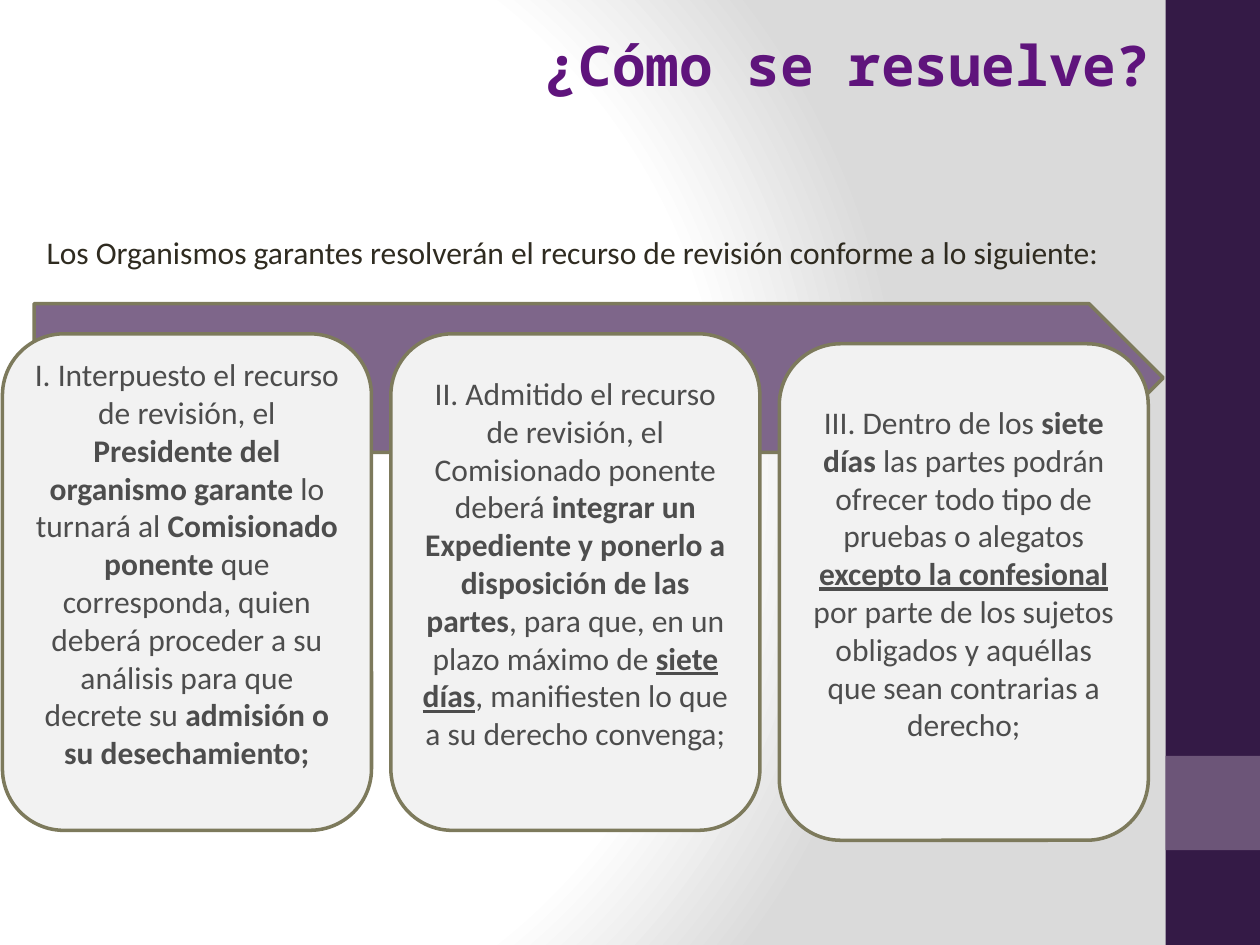
from dataclasses import dataclass

from lxml.etree import SubElement
from pptx import Presentation
from pptx.dml.color import RGBColor
from pptx.enum.shapes import MSO_SHAPE
from pptx.enum.text import MSO_ANCHOR, PP_ALIGN
from pptx.oxml.ns import qn
from pptx.util import Cm, Pt


@dataclass(frozen=True)
class Theme:
    band: str = "341A46"
    band_accent: str = "6C5578"
    title: str = "5F147C"
    intro: str = "2F2B20"
    arrow: str = "7E668A"
    outline: str = "7D7A5C"
    card: str = "F2F2F2"
    card_text: str = "4D4D4D"
    title_font: str = "Noto Sans Mono"
    body_font: str = "Calibri"
    title_size: int = 32
    body_size: int = 18
    line_width: int = 2
    backdrop: tuple = ((0, "FFFFFF"), (75, "FFFFFF"), (100, "DADADA"))


THEME = Theme()

# Each step is a list of (text, style); b is bold, u is underlined.
STEPS = [
    [
        ("I. Interpuesto el recurso de revisión, el ", ""),
        ("Presidente del organismo garante ", "b"),
        ("lo turnará al ", ""),
        ("Comisionado ponente ", "b"),
        ("que corresponda, quien deberá proceder a su análisis "
         "para que decrete su ", ""),
        ("admisión o su desechamiento;", "b"),
    ],
    [
        ("II. Admitido el recurso de revisión, el Comisionado ponente deberá ", ""),
        ("integrar un Expediente y ponerlo a disposición de las partes", "b"),
        (", para que, en un plazo máximo de ", ""),
        ("siete días", "bu"),
        (", manifiesten lo que a su derecho convenga;", ""),
    ],
    [
        ("III. Dentro de los ", ""),
        ("siete días", "b"),
        (" las partes podrán ofrecer todo tipo de pruebas o alegatos ", ""),
        ("excepto la confesional ", "bu"),
        ("por parte de los sujetos obligados y aquéllas que sean "
         "contrarias a derecho;", ""),
    ],
]
CARD_LEFT, CARD_PITCH = 0.05, 7.83
CARD_WIDTH, CARD_HEIGHT = 7.44, 10.01
CARD_TOPS = (6.73, 6.73, 6.93)


def set_radial_background(slide):
    """Spread the backdrop colours in circles from a point left of centre."""
    fill = slide.background.fill
    fill.gradient()
    grad = slide.background._cSld.find(".//" + qn("a:gradFill"))
    for child in list(grad):
        grad.remove(child)
    stops = SubElement(grad, qn("a:gsLst"))
    for pos, color in THEME.backdrop:
        stop = SubElement(stops, qn("a:gs"), pos=str(pos * 1000))
        SubElement(stop, qn("a:srgbClr"), val=color)
    circle = SubElement(grad, qn("a:path"), {"path": "circle"})
    SubElement(circle, qn("a:fillToRect"),
               l="20000", t="50000", r="100000", b="50000")


def format_run(r, font, size, color, style=""):
    r.font.name = font
    r.font.size = Pt(size)
    r.font.color.rgb = RGBColor.from_string(color)
    r.font.bold = "b" in style
    r.font.underline = "u" in style


def add_block(slide, kind, left, top, width, height, fill, outlined=False):
    sp = slide.shapes.add_shape(kind, Cm(left), Cm(top), Cm(width), Cm(height))
    sp.shadow.inherit = False
    sp.fill.solid()
    sp.fill.fore_color.rgb = RGBColor.from_string(fill)
    if outlined:
        sp.line.color.rgb = RGBColor.from_string(THEME.outline)
        sp.line.width = Pt(THEME.line_width)
    else:
        sp.line.fill.background()
    return sp


def set_title(slide, text):
    sp = slide.shapes.title
    sp.left, sp.top, sp.width, sp.height = Cm(4.7), Cm(0.48), Cm(18.75), Cm(1.63)
    tf = sp.text_frame
    tf.text = text
    tf.vertical_anchor = MSO_ANCHOR.TOP
    p = tf.paragraphs[0]
    p.alignment = PP_ALIGN.RIGHT
    format_run(p.runs[0], THEME.title_font, THEME.title_size, THEME.title, "b")


def add_intro(slide, text):
    tf = slide.shapes.add_textbox(Cm(0.69), Cm(4.57), Cm(22.4), Cm(1.02)).text_frame
    tf.word_wrap = True
    tf.text = text
    format_run(tf.paragraphs[0].runs[0],
               THEME.body_font, THEME.body_size, THEME.intro)


def add_card(slide, left, top, parts):
    sp = add_block(slide, MSO_SHAPE.ROUNDED_RECTANGLE, left, top,
                   CARD_WIDTH, CARD_HEIGHT, THEME.card, outlined=True)
    tf = sp.text_frame
    tf.word_wrap = True
    tf.vertical_anchor = MSO_ANCHOR.MIDDLE
    tf.margin_bottom = Cm(0.89)
    p = tf.paragraphs[0]
    p.alignment = PP_ALIGN.CENTER
    for text, style in parts:
        r = p.add_run()
        r.text = text
        format_run(r, THEME.body_font, THEME.body_size, THEME.card_text, style)


def main():
    prs = Presentation()
    prs.slide_width, prs.slide_height = Cm(25.4), Cm(19.05)
    slide = prs.slides.add_slide(prs.slide_layouts[5])
    set_radial_background(slide)

    add_block(slide, MSO_SHAPE.RECTANGLE, 23.5, 0, 1.9, 19.05, THEME.band)
    add_block(slide, MSO_SHAPE.RECTANGLE, 23.5, 15.24, 1.9, 1.9, THEME.band_accent)
    set_title(slide, "¿Cómo se resuelve?")
    add_intro(slide, "Los Organismos garantes resolverán el recurso de revisión "
                     "conforme a lo siguiente:")
    add_block(slide, MSO_SHAPE.PENTAGON, 0.69, 6.12, 22.76, 3, THEME.arrow,
              outlined=True)
    for i, (top, parts) in enumerate(zip(CARD_TOPS, STEPS)):
        add_card(slide, CARD_LEFT + i * CARD_PITCH, top, parts)

    prs.save("out.pptx")


if __name__ == "__main__":
    main()
